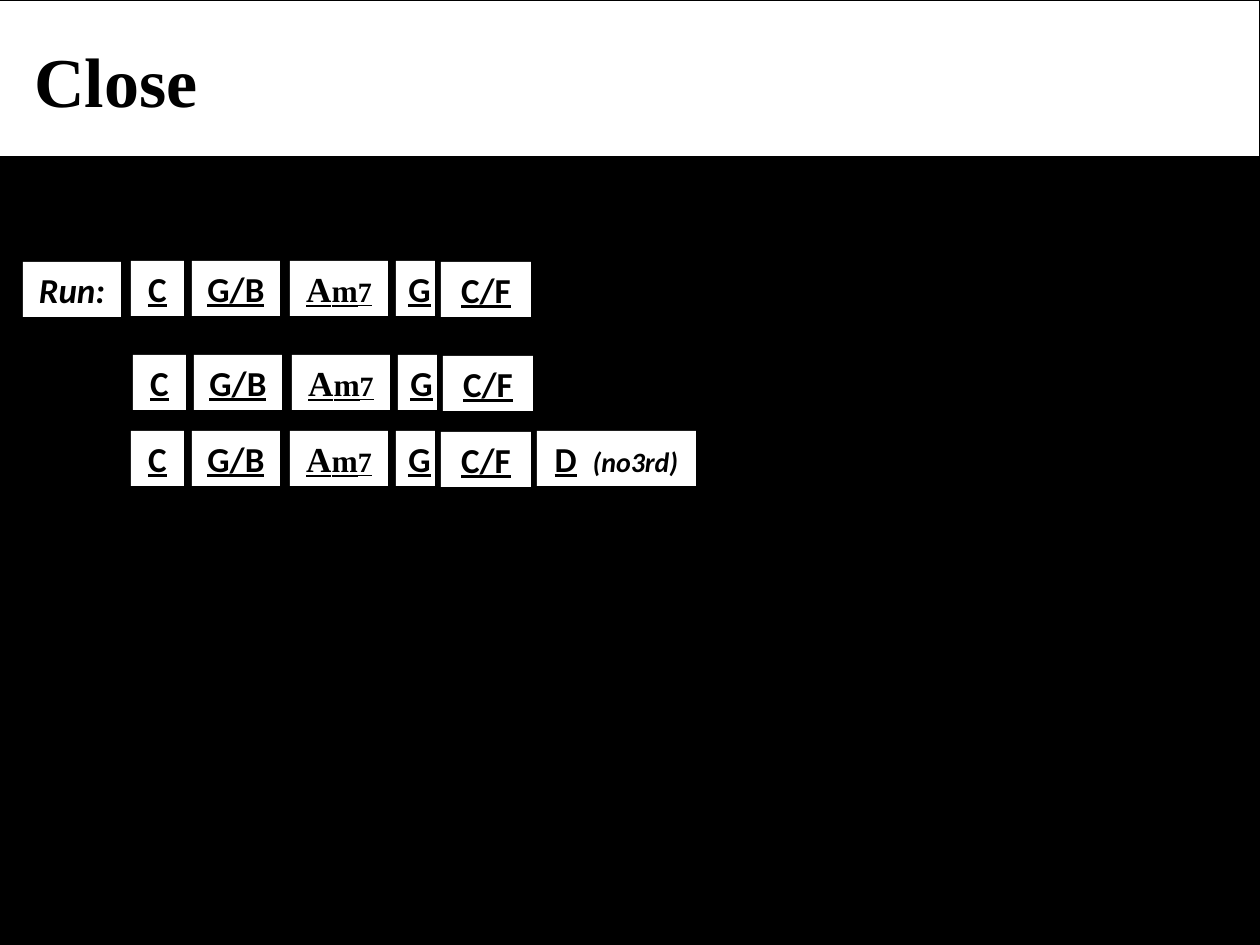
import pptx
import pptx.dml.color
import pptx.enum.shapes
import pptx.enum.text
import pptx.util

BLACK = pptx.dml.color.RGBColor(0x00, 0x00, 0x00)
WHITE = pptx.dml.color.RGBColor(0xFF, 0xFF, 0xFF)
PX = 914400 // 126
SANS, SERIF = "Calibri", "Times New Roman"
BOX_H = 55


def run(text, size=20, font=SANS, underline=False, italic=False):
    return dict(text=text, size=size, font=font, underline=underline, italic=italic)


def add_run(p, text, size, font, underline, italic):
    r = p.add_run()
    r.text = text
    r.font.size = pptx.util.Pt(size)
    r.font.name = font
    r.font.bold = True
    r.font.italic = italic
    r.font.underline = underline
    r.font.color.rgb = BLACK


class Sheet:
    """Style and current slide of a chord sheet; lengths are in px."""

    def __init__(self, prs):
        self.s = prs.slides.add_slide(prs.slide_layouts[6])

    def band(self, x, y, w, h, fill):
        sp = self.s.shapes.add_shape(
            pptx.enum.shapes.MSO_SHAPE.RECTANGLE, x * PX, y * PX, w * PX, h * PX)
        sp.shadow.inherit = False
        sp.fill.solid()
        sp.fill.fore_color.rgb = fill
        sp.line.color.rgb = BLACK
        sp.line.width = pptx.util.Pt(0.75)

    def label(self, x, y, w, h, runs, align=pptx.enum.text.PP_ALIGN.CENTER):
        sp = self.s.shapes.add_textbox(x * PX, y * PX, w * PX, h * PX)
        sp.fill.solid()
        sp.fill.fore_color.rgb = WHITE
        tf = sp.text_frame
        tf.word_wrap = True
        tf.auto_size = pptx.enum.text.MSO_AUTO_SIZE.SHAPE_TO_FIT_TEXT
        p = tf.paragraphs[0]
        p.alignment = align
        for r in runs:
            add_run(p, **r)


# Left, drop below the row's top, width, runs
CHORDS = [
    (192, 0, 88, [run("G/B", underline=True)]),
    (131, 0, 53, [run("C", underline=True)]),
    (290, 0, 98, [run(text, size, SERIF, underline=True)
                  for text, size in (("A", 20), ("m", 18), ("7", 16))]),
    (396, 0, 39, [run("G", underline=True)]),
    (441, 1, 90, [run("C/F", underline=True)]),
]
# Top and sideways shift of each row
ROWS = [(261, 0), (355, 2), (431, 0)]


def main():
    prs = pptx.Presentation()
    prs.slide_width, prs.slide_height = 1260 * PX, 945 * PX
    sheet = Sheet(prs)
    sheet.band(1, 157, 1259, 788, BLACK)
    sheet.band(-1, 0, 1261, 157, WHITE)
    sheet.label(22, 31, 420, 97, [run("Close", 40, SERIF)],
                align=pptx.enum.text.PP_ALIGN.LEFT)

    for top, shift in ROWS:
        for x, drop, w, runs in CHORDS:
            sheet.label(x + shift, top + drop, w, BOX_H, runs)
    sheet.label(23, 262, 98, BOX_H, [run("Run:", italic=True)])
    sheet.label(537, 431, 159, BOX_H,
                [run("D", underline=True), run("  "), run("(no3rd)", 16, italic=True)])

    prs.save("out.pptx")


if __name__ == "__main__":
    main()
